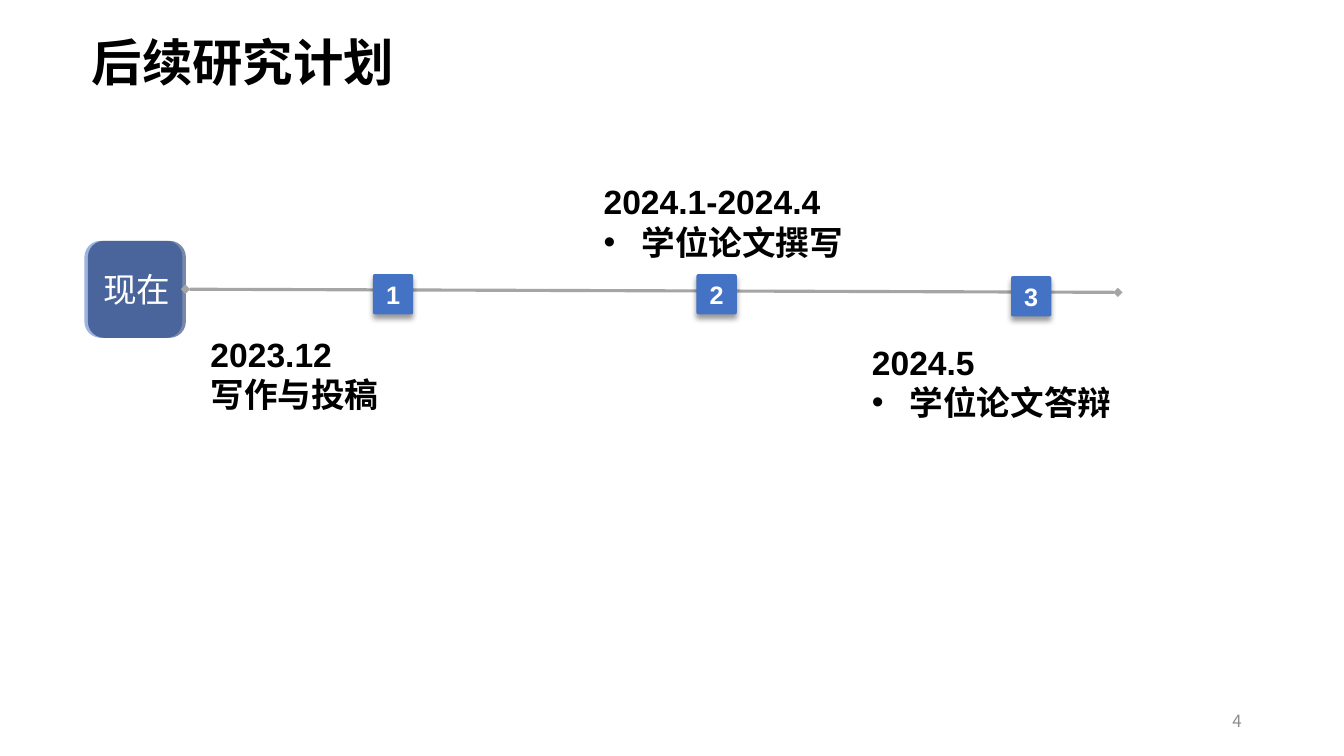
"""Build the research plan timeline slide."""
from dataclasses import dataclass

from lxml import etree
from pptx import Presentation
from pptx.dml.color import RGBColor
from pptx.enum import shapes, text
from pptx.oxml import ns
from pptx.util import Pt


@dataclass(frozen=True)
class Theme:
    ink: str = "000000"
    white: str = "FFFFFF"
    blue: str = "4472C4"
    navy: str = "002060"
    line: str = "A5A5A5"
    muted: str = "8C8C8C"
    sans: str = "Arial"
    cjk: str = "Noto Sans CJK SC"
    title: int = 36
    body: int = 24
    mark: int = 18
    small: int = 12


def add(parent, tag, **attrs):
    node = etree.SubElement(parent, ns.qn(tag))
    for key, val in attrs.items():
        node.set(key, str(val))
    return node


class Deck:
    def __init__(self, theme):
        self.theme = theme
        self.prs = Presentation()
        self.prs.slide_width, self.prs.slide_height = Pt(960), Pt(540)
        self.slide = self.prs.slides.add_slide(self.prs.slide_layouts[5])

    def run(self, para, words, size, color, bold=False, face=None):
        run = para.add_run()
        run.text = words
        font = run.font
        font.size, font.bold = Pt(size), bold
        font.color.rgb = RGBColor.from_string(color)
        font.name = face or self.theme.sans
        add(run._r.get_or_add_rPr(), "a:ea", typeface=self.theme.cjk)

    def frame(self, shape, anchor, pad=(7.2, 3.6)):
        frame = shape.text_frame
        frame.word_wrap = True
        frame.auto_size = text.MSO_AUTO_SIZE.NONE
        frame.vertical_anchor = anchor
        frame.margin_left = frame.margin_right = Pt(pad[0])
        frame.margin_top = frame.margin_bottom = Pt(pad[1])
        return frame

    def title(self, words, box):
        shape = self.slide.shapes.title
        shape.left, shape.top, shape.width, shape.height = map(Pt, box)
        para = self.frame(shape, text.MSO_ANCHOR.MIDDLE).paragraphs[0]
        para.alignment = text.PP_ALIGN.LEFT
        para.line_spacing = 0.9
        self.run(para, words, self.theme.title, self.theme.ink, True, self.theme.cjk)

    def page(self, words, box):
        shape = self.slide.shapes.add_textbox(*map(Pt, box))
        para = self.frame(shape, text.MSO_ANCHOR.MIDDLE).paragraphs[0]
        para.alignment = text.PP_ALIGN.RIGHT
        self.run(para, words, self.theme.small, self.theme.muted, face=self.theme.cjk)

    def block(self, box, fill, words="", size=0, bold=False, pad=(7.2, 3.6),
              curve=None, alpha=None, root=None):
        home = root or self.slide
        shape = home.shapes.add_shape(
            shapes.MSO_SHAPE.ROUNDED_RECTANGLE, *map(Pt, box))
        shape.shadow.inherit = False
        shape.fill.solid()
        shape.fill.fore_color.rgb = RGBColor.from_string(fill)
        shape.line.fill.background()
        if curve is not None:
            shape.adjustments[0] = curve
        if alpha is not None:
            tint = shape._element.spPr.find(".//" + ns.qn("a:srgbClr"))
            add(tint, "a:alpha", val=alpha * 1000)
        if words:
            para = self.frame(shape, text.MSO_ANCHOR.MIDDLE, pad).paragraphs[0]
            para.alignment = text.PP_ALIGN.CENTER
            self.run(para, words, size, self.theme.white, bold)
        return shape

    def start(self, words, left, top, width, height):
        group = self.slide.shapes.add_group_shape()
        self.block((left, top, width, height), self.theme.blue, alpha=53, root=group)
        self.block((left + 2.5, top, width, height), self.theme.navy, words,
                   self.theme.body, alpha=53, root=group)

    def axis(self, *ends):
        line = self.slide.shapes.add_connector(
            shapes.MSO_CONNECTOR.STRAIGHT, *map(Pt, ends))
        line.line.color.rgb = RGBColor.from_string(self.theme.line)
        line.line.width = Pt(2.25)
        stroke = line.line._get_or_add_ln()
        for tag in ("a:headEnd", "a:tailEnd"):
            add(stroke, tag, type="diamond")
        add(line._element.spPr, "a:effectLst")

    def mark(self, words, left, top):
        shape = self.block((left, top, 28.8, 28.8), self.theme.blue, words,
                           self.theme.mark, True, (5, 3), 0.05)
        glow = shape._element.spPr.find(ns.qn("a:effectLst"))
        shade = add(glow, "a:outerShdw", blurRad=Pt(4), dist=Pt(3),
                    dir=5400000, rotWithShape=0)
        add(add(shade, "a:srgbClr", val=self.theme.ink), "a:alpha", val=40000)

    def label(self, date, task, dot, left, top, width):
        shape = self.slide.shapes.add_textbox(*map(Pt, (left, top, width, 63.4)))
        frame = self.frame(shape, text.MSO_ANCHOR.TOP, (5, 3))
        for para, words in ((frame.paragraphs[0], date), (frame.add_paragraph(), task)):
            if dot and words == task:
                props = para._p.get_or_add_pPr()
                props.set("marL", str(Pt(27)))
                props.set("indent", str(Pt(-27)))
                add(props, "a:buFont", typeface=self.theme.sans)
                add(props, "a:buChar", char="•")
            self.run(para, words, self.theme.body, self.theme.ink, True)


def main():
    deck = Deck(Theme())
    deck.title("后续研究计划", (58.3, 16.5, 894, 60.5))
    deck.page("4", (678, 500.5, 216, 28.8))
    deck.start("现在", 60.3, 172, 70, 69.3)
    deck.axis(132.5, 206.6, 798.5, 208.8)
    steps = (
        (266.4, 195.8, "2023.12", "写作与投稿", False, 145.4, 235.4, 412.6),
        (497.5, 195.8, "2024.1-2024.4", "学位论文撰写", True, 426.2, 126.4, 199.4),
        (722.2, 197.3, "2024.5", "学位论文答辩", True, 617.8, 241.2, 334.8),
    )
    for num, (left, top, *note) in enumerate(steps, 1):
        deck.mark(str(num), left, top)
        deck.label(*note)
    deck.prs.save("out.pptx")


if __name__ == "__main__":
    main()
